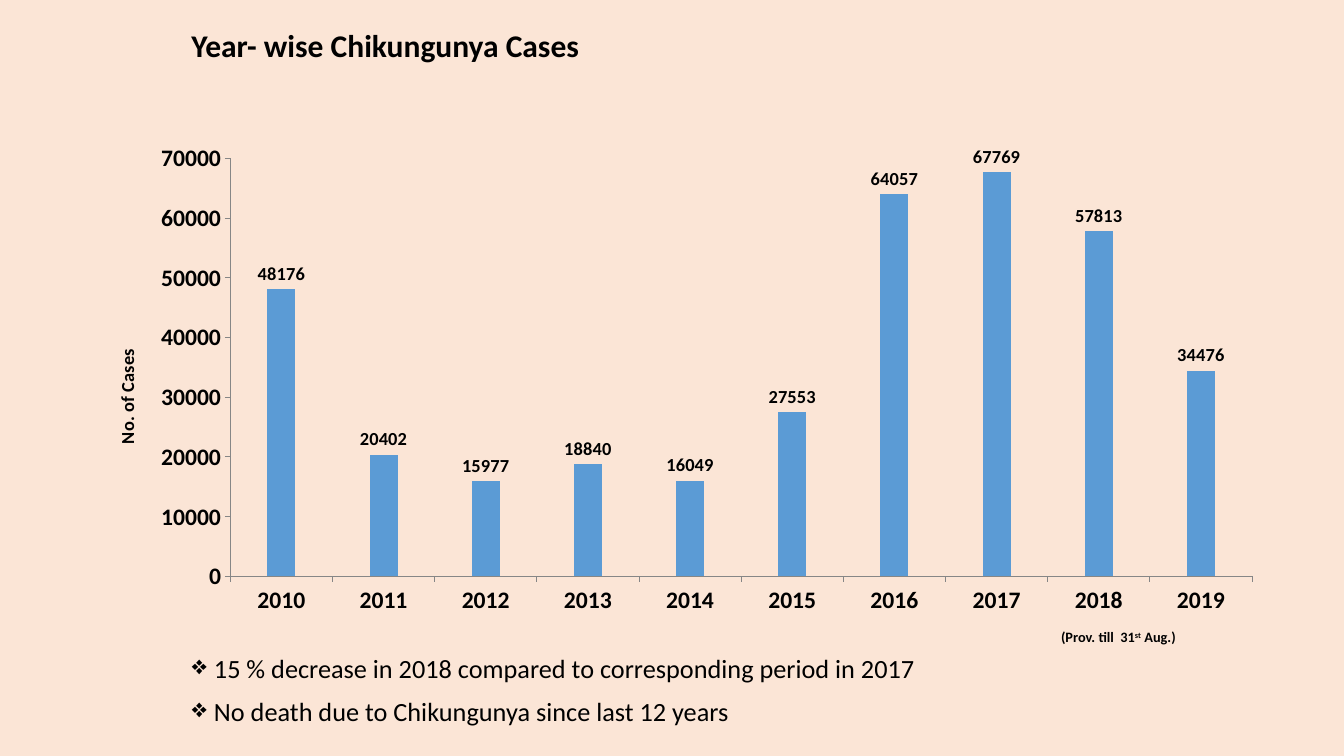
from lxml import etree
from pptx import Presentation
from pptx import util as u
from pptx.chart.data import CategoryChartData
from pptx.dml.color import RGBColor
from pptx.enum import chart as charts, text
from pptx.oxml import parse_xml
from pptx.oxml.ns import nsdecls, qn

PX = 914400 / 94.5
COLORS = {"background": "FBE5D6", "ink": "000000", "bar": "5B9BD5", "axis": "868686"}
FONT = "Calibri"
CASES = {
    "2010": 48176, "2011": 20402, "2012": 15977, "2013": 18840, "2014": 16049,
    "2015": 27553, "2016": 64057, "2017": 67769, "2018": 57813, "2019": 34476,
}


def px(value):
    return u.Emu(round(value * PX))


def color(name):
    return RGBColor.from_string(COLORS[name])


def set_layout(element, x, y, w=None, h=None):
    for old in element.findall(qn("c:layout")):
        element.remove(old)
    target = '<c:layoutTarget val="inner"/>' if w else ""
    size = f'<c:w val="{w}"/><c:h val="{h}"/>' if w else ""
    layout = parse_xml(
        f'<c:layout {nsdecls("c")}><c:manualLayout>{target}'
        '<c:xMode val="edge"/><c:yMode val="edge"/>'
        f'<c:x val="{x}"/><c:y val="{y}"/>{size}</c:manualLayout></c:layout>'
    )
    text_part = element.find(qn("c:tx"))
    if text_part is None:
        element.insert(0, layout)
    else:
        text_part.addnext(layout)


class Slide:
    def __init__(self, deck):
        self.page = deck.slides.add_slide(deck.slide_layouts[5])
        fill = self.page.background.fill
        fill.solid()
        fill.fore_color.rgb = color("background")

    def style(self, font, size, bold=False):
        font.name = FONT
        font.size = u.Pt(size)
        font.bold = bold
        font.color.rgb = color("ink")

    def add_run(self, para, words, size, bold=False, baseline=None):
        span = para.add_run()
        span.text = words
        self.style(span.font, size, bold)
        if baseline:
            span.font._element.set("baseline", str(baseline))

    def title(self, words, left, top, width, height):
        box = self.page.shapes.title
        box.left, box.top, box.width, box.height = map(px, (left, top, width, height))
        frame = box.text_frame
        frame.auto_size = text.MSO_AUTO_SIZE.NONE
        frame.vertical_anchor = text.MSO_ANCHOR.MIDDLE
        para = frame.paragraphs[0]
        para.alignment = text.PP_ALIGN.LEFT
        para.line_spacing = 0.9
        self.add_run(para, words, 24, True)

    def text_box(self, left, top, width, height):
        box = self.page.shapes.add_textbox(*map(px, (left, top, width, height)))
        frame = box.text_frame
        frame.word_wrap = True
        frame.auto_size = text.MSO_AUTO_SIZE.SHAPE_TO_FIT_TEXT
        frame.margin_left = frame.margin_right = px(10)
        frame.margin_top = frame.margin_bottom = px(6)
        return frame

    def bullets(self, lines, *place):
        frame = self.text_box(*place)
        for index, words in enumerate(lines):
            para = frame.add_paragraph() if index else frame.paragraphs[0]
            para.alignment = text.PP_ALIGN.JUSTIFY
            para.space_before = para.space_after = u.Pt(4.4)
            props = para._p.get_or_add_pPr()
            props.set("marL", str(px(22)))
            props.set("indent", str(-px(22)))
            etree.SubElement(props, qn("a:buChar")).set("char", "❖")
            self.add_run(para, words, 20)

    def note(self, parts, *place):
        para = self.text_box(*place).paragraphs[0]
        for words, baseline in parts:
            self.add_run(para, words, 10.9, True, baseline)

    def column_chart(self, values, axis_title, left, top, width, height):
        data = CategoryChartData()
        data.categories = list(values)
        data.add_series("Cases", values.values())
        chart = self.page.shapes.add_chart(
            charts.XL_CHART_TYPE.COLUMN_CLUSTERED,
            *map(px, (left, top, width, height)), data
        ).chart
        chart.has_legend = chart.has_title = False
        self.style(chart.font, 10)
        plot = chart.plots[0]
        plot.gap_width = 266
        plot.vary_by_categories = False
        series = plot.series[0]
        series.format.fill.solid()
        series.format.fill.fore_color.rgb = color("bar")
        labels = series.data_labels
        labels.show_value = True
        labels.position = charts.XL_LABEL_POSITION.OUTSIDE_END
        self.style(labels.font, 14, True)
        for axis in (chart.category_axis, chart.value_axis):
            axis.has_major_gridlines = False
            axis.major_tick_mark = charts.XL_TICK_MARK.OUTSIDE
            axis.minor_tick_mark = charts.XL_TICK_MARK.NONE
            axis.format.line.color.rgb = color("axis")
            axis.format.line.width = u.Pt(0.75)
            self.style(axis.tick_labels.font, 18, True)
        axis = chart.value_axis
        axis.minimum_scale, axis.maximum_scale, axis.major_unit = 0, 70000, 10000
        title = axis.axis_title
        self.add_run(title.text_frame.paragraphs[0], axis_title, 14, True)
        body = title._element.find(".//" + qn("a:bodyPr"))
        body.set("rot", "-5400000")
        body.set("vert", "horz")
        set_layout(title._element, 0.03, 0.45)
        set_layout(plot._element.getparent(), 0.13, 0.11, 0.855, 0.76)


def main():
    deck = Presentation()
    deck.slide_width, deck.slide_height = px(1344), px(756)
    slide = Slide(deck)
    slide.title("Year- wise Chikungunya Cases", 182, 20, 979, 54)
    slide.bullets([
        "15 % decrease in 2018 compared to corresponding period in 2017",
        "No death due to Chikungunya since last 12 years",
    ], 182, 646, 1061, 85)
    slide.note([("(Prov. till  31", None), ("st", 30000), (" Aug.)", None)],
               1051, 622, 149, 28)
    slide.column_chart(CASES, "No. of Cases", 75, 98, 1195, 550)
    deck.save("out.pptx")


if __name__ == "__main__":
    main()
